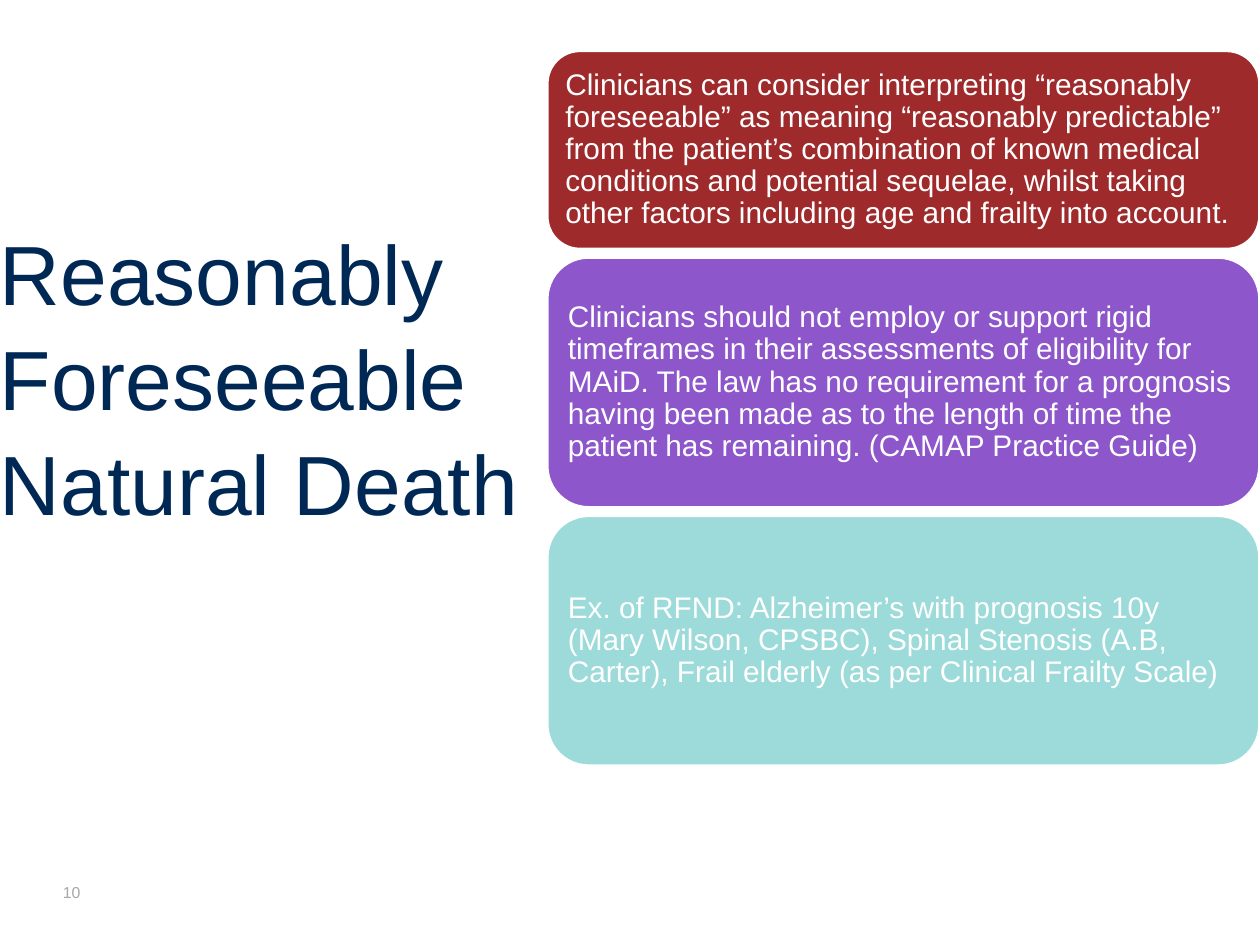
from pptx import Presentation
from pptx.dml.color import RGBColor
from pptx.enum.shapes import MSO_SHAPE
from pptx.enum.text import MSO_ANCHOR, PP_ALIGN
from pptx.util import Inches, Pt

ROUNDED = MSO_SHAPE.ROUNDED_RECTANGLE
TOP, MIDDLE, BOTTOM = MSO_ANCHOR.TOP, MSO_ANCHOR.MIDDLE, MSO_ANCHOR.BOTTOM
LEFT = PP_ALIGN.LEFT
COLORS = {
    "navy": "002855",
    "grey": "A6A6A6",
    "white": "FFFFFF",
    "red": "9E2A2B",
    "purple": "8D56CA",
    "teal": "9CDBD9",
}


def rgb(name):
    return RGBColor.from_string(COLORS[name])


def set_text(sp, text, size, color, anchor, inset, spacing):
    tf = sp.text_frame
    tf.word_wrap = True
    tf.vertical_anchor = anchor
    tf.margin_left = tf.margin_right = Inches(inset)
    tf.margin_top = tf.margin_bottom = Inches(inset)
    tf.text = text
    p = tf.paragraphs[0]
    p.alignment = LEFT
    p.line_spacing = spacing
    r = p.runs[0]
    r.font.name = "Arial"
    r.font.size = Pt(size)
    r.font.color.rgb = rgb(color)


prs = Presentation()
prs.slide_width = Inches(10)
prs.slide_height = Inches(7.5)
s = prs.slides.add_slide(prs.slide_layouts[6])

title = s.shapes.add_textbox(Inches(0), Inches(0.75), Inches(4.34), Inches(5.5))
set_text(title, "Reasonably Foreseeable Natural Death", 48, "navy", TOP, 0, 1.04)
title.text_frame.margin_top = Inches(0.98)

number = s.shapes.add_textbox(Inches(0.5), Inches(6.53), Inches(2), Inches(0.63))
set_text(number, "10", 9, "grey", BOTTOM, 0, 1.0)

cards = [
    ("red", 1.58,
     "Clinicians can consider interpreting “reasonably foreseeable” as meaning "
     "“reasonably predictable” from the patient’s combination of known medical "
     "conditions and potential sequelae, whilst taking other factors including "
     "age and frailty into account."),
    ("purple", 1.99,
     "Clinicians should not employ or support rigid timeframes in their "
     "assessments of eligibility for MAiD. The law has no requirement for a "
     "prognosis having been made as to the length of time the patient has "
     "remaining. (CAMAP Practice Guide)"),
    ("teal", 1.99,
     "Ex. of RFND: Alzheimer’s with prognosis 10y (Mary Wilson, CPSBC), Spinal "
     "Stenosis (A.B, Carter), Frail elderly (as per Clinical Frailty Scale)"),
]
gap = 0.06
top = 0.4
for color, height, text in cards:
    sp = s.shapes.add_shape(ROUNDED, Inches(4.34), Inches(top), Inches(5.66), Inches(height))
    sp.shadow.inherit = False
    sp.fill.solid()
    sp.fill.fore_color.rgb = rgb(color)
    sp.line.color.rgb = rgb("white")
    sp.line.width = Pt(2)
    set_text(sp, text, 17, "white", MIDDLE, 0.07, 0.9)
    top += height + gap

prs.save("out.pptx")
